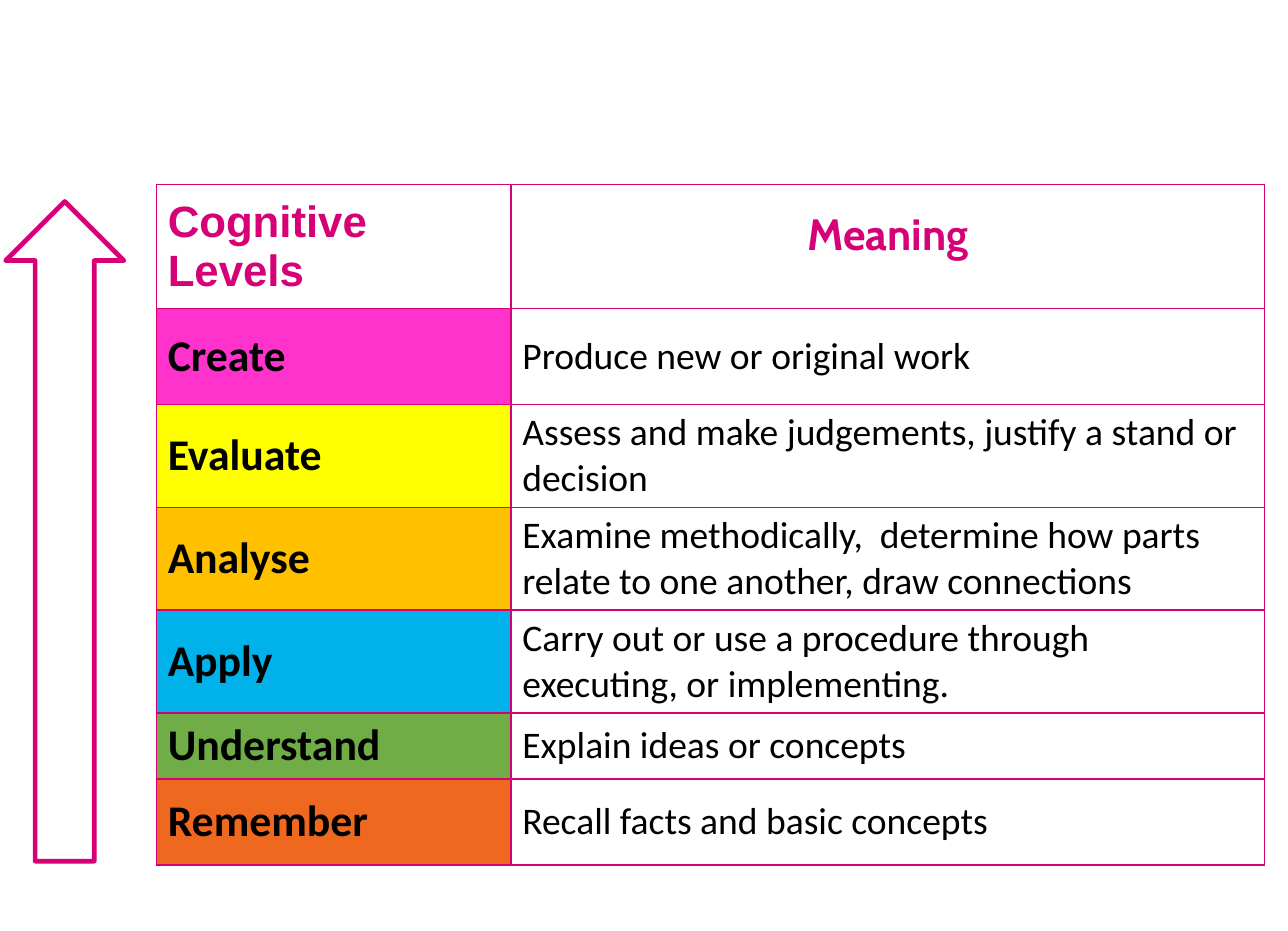
from lxml.etree import SubElement
from pptx import Presentation
from pptx.dml.color import RGBColor
from pptx.enum.shapes import MSO_SHAPE
from pptx.enum.text import MSO_ANCHOR, PP_ALIGN
from pptx.oxml.ns import qn
from pptx.util import Pt

COLORS = {
    "magenta": "D60077",
    "white": "FFFFFF",
    "black": "000000",
    "pink": "FF33CC",
    "yellow": "FFFF00",
    "amber": "FFC000",
    "blue": "00B1EA",
    "green": "70AD47",
    "orange": "EF6820",
}

# Level, fill, meaning, row height
LEVELS = [
    ("Create", "pink", "Produce new or original work", 61.2),
    ("Evaluate", "yellow",
     "Assess and make judgements, justify a stand or decision", 65.8),
    ("Analyse", "amber",
     "Examine methodically,  determine how parts relate to one another, "
     "draw connections", 65.8),
    ("Apply", "blue",
     "Carry out or use a procedure through executing, or implementing.", 65.8),
    ("Understand", "green", "Explain ideas or concepts", 42.3),
    ("Remember", "orange", "Recall facts and basic concepts", 55),
]
HEADER_HEIGHT = 79.4
COLUMN_WIDTHS = (226.8, 481.7)

HEADING = {"name": "Arial", "size": Pt(28), "bold": True}
MEANING_HEADING = {**HEADING, "name": "Cabin"}
LEVEL = {**HEADING, "name": "Calibri"}
MEANING = {"name": "Calibri", "size": Pt(24), "bold": False}


def color(name):
    return RGBColor.from_string(COLORS[name])


def add_borders(cell):
    properties = cell._tc.get_or_add_tcPr()
    for side in ("lnL", "lnR", "lnT", "lnB"):
        line = SubElement(properties, qn(f"a:{side}"), w=str(Pt(1)))
        fill = SubElement(line, qn("a:solidFill"))
        SubElement(fill, qn("a:srgbClr"), val=COLORS["magenta"])


def fill_cell(cell, text, font_format, text_color, fill_color="white"):
    add_borders(cell)
    cell.fill.solid()
    cell.fill.fore_color.rgb = color(fill_color)
    cell.vertical_anchor = MSO_ANCHOR.MIDDLE
    para = cell.text_frame.paragraphs[0]
    span = para.add_run()
    span.text = text
    for name, value in font_format.items():
        setattr(span.font, name, value)
    span.font.color.rgb = color(text_color)
    return para


def add_levels_table(page):
    heights = [HEADER_HEIGHT] + [level[3] for level in LEVELS]
    frame = page.shapes.add_table(
        len(heights), len(COLUMN_WIDTHS), Pt(100.1), Pt(118),
        Pt(sum(COLUMN_WIDTHS)), Pt(sum(heights)))
    table = frame.table
    for column, width in zip(table.columns, COLUMN_WIDTHS):
        column.width = Pt(width)
    for row, height in zip(table.rows, heights):
        row.height = Pt(height)

    # Header row
    fill_cell(table.cell(0, 0), "Cognitive Levels", HEADING, "magenta")
    para = fill_cell(table.cell(0, 1), "Meaning", MEANING_HEADING, "magenta")
    para.alignment = PP_ALIGN.CENTER
    para.line_spacing = Pt(19.3)

    # One row per cognitive level
    for index, (level, fill, meaning, _) in enumerate(LEVELS, start=1):
        fill_cell(table.cell(index, 0), level, LEVEL, "black", fill)
        fill_cell(table.cell(index, 1), meaning, MEANING, "black")


def add_rising_arrow(page):
    arrow = page.shapes.add_shape(
        MSO_SHAPE.UP_ARROW, Pt(3.6), Pt(128.9), Pt(75.6), Pt(421.9))
    arrow.shadow.inherit = False
    arrow.fill.background()
    arrow.line.color.rgb = color("magenta")
    arrow.line.width = Pt(3)


def main():
    deck = Presentation()
    deck.slide_width, deck.slide_height = Pt(823.68), Pt(595.44)
    page = deck.slides.add_slide(deck.slide_layouts[6])
    add_levels_table(page)
    add_rising_arrow(page)
    deck.save("out.pptx")


if __name__ == "__main__":
    main()
